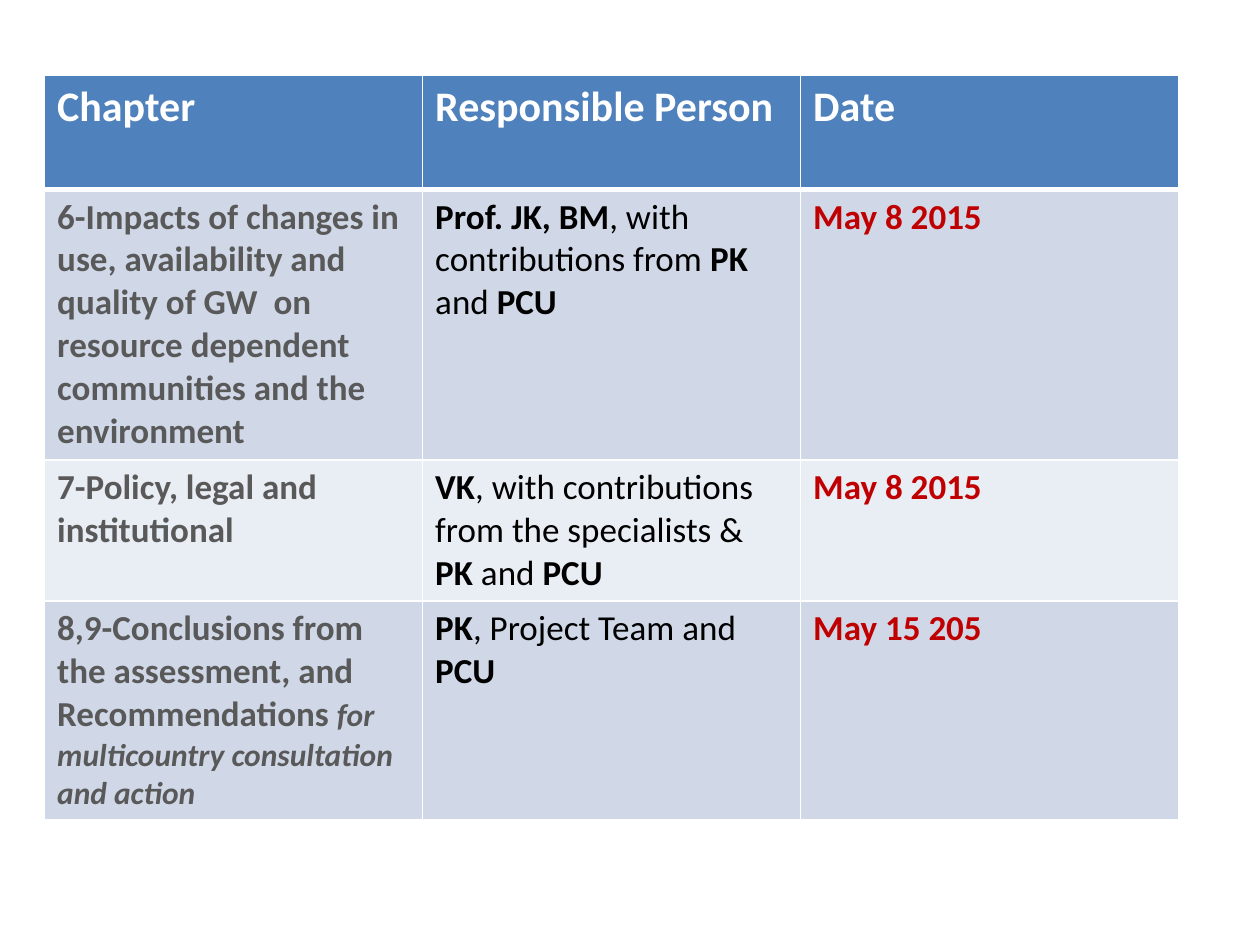
from lxml.etree import SubElement
from pptx import Presentation
from pptx.dml.color import RGBColor
from pptx.oxml import parse_xml
from pptx.oxml.ns import nsdecls
from pptx.util import Cm, Pt

WHITE = RGBColor(0xFF, 0xFF, 0xFF)
BLACK = RGBColor(0x00, 0x00, 0x00)
GREY = RGBColor(0x59, 0x59, 0x59)
RED = RGBColor(0xC0, 0x00, 0x00)
HEADER_BLUE = RGBColor(0x4F, 0x81, 0xBD)
BAND_DARK = RGBColor(0xD0, 0xD8, 0xE8)
BAND_LIGHT = RGBColor(0xE9, 0xED, 0xF4)

COLUMN_COLORS = (GREY, BLACK, RED)
ROW_HEIGHTS = (2.3, 5.45, 2.85, 4.37)

# Each cell is a list of runs: (text, style), where style is any of "b" and "i".
HEADER = [[(title, "b")] for title in ("Chapter", "Responsible Person", "Date")]
CHAPTERS = [
    [
        [("6-Impacts of changes in use, availability and quality of GW  on "
          "resource dependent communities and the environment", "b")],
        [("Prof. JK, BM", "b"), (", with contributions from ", ""),
         ("PK ", "b"), ("and ", ""), ("PCU", "b")],
        [("May 8 2015", "b")],
    ],
    [
        [("7-Policy, legal and institutional", "b")],
        [("VK", "b"), (", with contributions from the specialists & ", ""),
         ("PK", "b"), (" and ", ""), ("PCU", "b")],
        [("May 8 2015", "b")],
    ],
    [
        [("8,9-Conclusions from the assessment, and Recommendations ", "b"),
         ("for multicountry consultation and action", "bi")],
        [("PK", "b"), (", Project Team and ", ""), ("PCU", "b")],
        [("May 15 205", "b")],
    ],
]


class SlideBuilder:
    font_name = "Calibri"
    header_size = Pt(24)
    body_size = Pt(20)
    italic_size = Pt(18)

    def __init__(self, slide):
        self.slide = slide

    def add_table(self, rows, left, top, width, row_heights):
        table = self.slide.shapes.add_table(
            len(rows), len(rows[0]), Cm(left), Cm(top), Cm(width), Cm(sum(row_heights))
        ).table
        for row, height in zip(table.rows, row_heights):
            row.height = Cm(height)
        for row_index, row in enumerate(rows):
            is_header = row_index == 0
            band = BAND_DARK if row_index % 2 else BAND_LIGHT
            for column_index, runs in enumerate(row):
                cell = table.cell(row_index, column_index)
                cell.fill.solid()
                cell.fill.fore_color.rgb = HEADER_BLUE if is_header else band
                self.add_borders(cell, top=3 if row_index == 1 else 1,
                                 bottom=3 if is_header else 1)
                self.add_runs(cell.text_frame.paragraphs[0], runs,
                              self.header_size if is_header else self.body_size,
                              WHITE if is_header else COLUMN_COLORS[column_index])

    def add_borders(self, cell, top, bottom):
        """Draw white cell borders; the widths are in points."""
        properties = cell._tc.get_or_add_tcPr()
        widths = {"lnL": 1, "lnR": 1, "lnT": top, "lnB": bottom}
        for index, (tag, width) in enumerate(widths.items()):
            line = parse_xml(
                f'<a:{tag} {nsdecls("a")} w="{Pt(width)}"><a:solidFill>'
                f'<a:srgbClr val="{WHITE}"/></a:solidFill></a:{tag}>')
            properties.insert(index, line)

    def add_runs(self, paragraph, runs, size, color):
        paragraph.font.name = self.font_name
        for text, style in runs:
            run = paragraph.add_run()
            run.text = text
            run.font.size = self.italic_size if "i" in style else size
            run.font.bold = "b" in style
            run.font.italic = "i" in style
            run.font.color.rgb = color


def main():
    presentation = Presentation()
    presentation.slide_width = Cm(25.4)
    presentation.slide_height = Cm(19.05)
    slide = presentation.slides.add_slide(presentation.slide_layouts[6])
    SlideBuilder(slide).add_table([HEADER, *CHAPTERS], left=0.9, top=1.52,
                                  width=22.86, row_heights=ROW_HEIGHTS)
    presentation.save("out.pptx")


if __name__ == "__main__":
    main()
